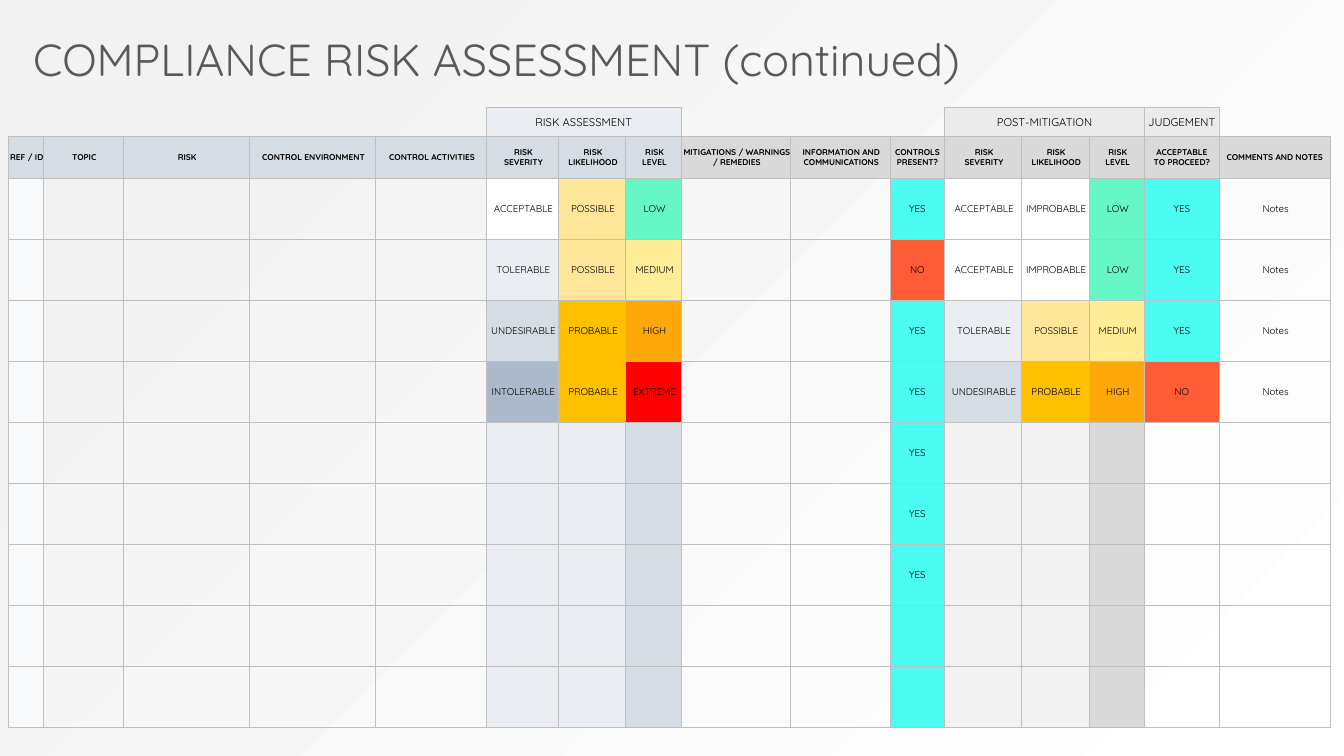
from pptx import Presentation
from pptx.dml.color import RGBColor
from pptx.enum.text import MSO_ANCHOR, MSO_AUTO_SIZE, PP_ALIGN
from pptx.oxml import parse_xml
from pptx.oxml.ns import nsdecls, qn
from pptx.oxml.xmlchemy import OxmlElement
from pptx.util import Inches, Pt

COLORS = {
    "white": "FFFFFF", "title": "595959", "text": "000000", "border": "BFBFBF",
    "mist": "F2F2F2", "ref": "F7F9FB", "blue_light": "EAEEF3", "blue": "D6DCE4",
    "blue_dark": "ACB9CA", "gray_light": "EBEBEB", "gray": "D9D9D9",
    "cyan": "4BFCF2", "green": "65F7C6", "sand": "FFE699", "yellow": "FFEC97",
    "amber": "FFC000", "orange": "FFA80B", "coral": "FF5B37", "red": "FF0000",
}
RATINGS = {
    "ACCEPTABLE": "white", "TOLERABLE": "blue_light", "UNDESIRABLE": "blue",
    "INTOLERABLE": "blue_dark", "IMPROBABLE": "white", "POSSIBLE": "sand",
    "PROBABLE": "amber", "LOW": "green", "MEDIUM": "yellow", "HIGH": "orange",
    "EXTREME": "red", "YES": "cyan", "NO": "coral",
}
COLUMN_FILLS = {0: "ref", 5: "blue_light", 6: "blue_light", 7: "blue",
                10: "cyan", 11: "mist", 12: "mist", 13: "gray"}
GROUPS = {5: (3, "RISK ASSESSMENT", "blue_light"),
          11: (3, "POST-MITIGATION", "gray_light"),
          14: (1, "JUDGEMENT", "gray_light")}
RATED = ["RISK\vSEVERITY", "RISK LIKELIHOOD", "RISK\vLEVEL"]
HEADERS = ["REF / ID", "TOPIC", "RISK", "CONTROL ENVIRONMENT", "CONTROL ACTIVITIES",
           *RATED, "MITIGATIONS / WARNINGS / REMEDIES",
           "INFORMATION AND COMMUNICATIONS", "CONTROLS PRESENT?", *RATED,
           "ACCEPTABLE\vTO PROCEED?", "COMMENTS AND NOTES"]
WIDTHS = [35, 79, 125, 125, 110, 71, 67, 55, 108, 99, 54, 76, 67, 55, 74, 110]
BEFORE = [("ACCEPTABLE", "POSSIBLE", "LOW"), ("TOLERABLE", "POSSIBLE", "MEDIUM"),
          ("UNDESIRABLE", "PROBABLE", "HIGH"), ("INTOLERABLE", "PROBABLE", "EXTREME")]
AFTER = [("ACCEPTABLE", "IMPROBABLE", "LOW")] * 2 + BEFORE[1:3]
CONTROLS = ["YES", "NO", "YES", "YES", "YES", "YES", "YES"]
PROCEED = ["YES", "YES", "YES", "NO"]
BODY_ROWS = 9
FLUSH_COLUMNS = (10, 14)


class Deck:
    """Hold the style and current slide, laid out on a grid of 160 by 90."""

    font, cols, rows = "Quicksand", 160, 90

    def __init__(self):
        self.prs = Presentation()
        self.prs.slide_width, self.prs.slide_height = Inches(13.33), Inches(7.5)
        self.s = self.prs.slides.add_slide(self.prs.slide_layouts[6])

    def x(self, n):
        return int(self.prs.slide_width * n / self.cols)

    def y(self, n):
        return int(self.prs.slide_height * n / self.rows)

    def rgb(self, name):
        return RGBColor.from_string(COLORS[name])

    def background(self, stops, angle):
        fill = self.s.background.fill
        fill.gradient()
        fill.gradient_angle = angle
        for stop, (position, color) in zip(fill.gradient_stops, stops):
            stop.position, stop.color.rgb = position, self.rgb(color)

    def set_text(self, p, text, size, color="text", bold=False):
        p.text = text
        for r in p.runs:
            for key, value in {"name": self.font, "size": Pt(size), "bold": bold}.items():
                setattr(r.font, key, value)
            r.font.color.rgb = self.rgb(color)
        marks = [(br, "a:rPr") for br in p._p.findall(qn("a:br"))]
        for parent, tag in marks + [(p._p, "a:endParaRPr")]:
            props = OxmlElement(tag)
            props.set("sz", str(size * 100))
            parent.append(props)

    def text(self, x, y, w, h, text, size, color):
        tf = self.s.shapes.add_textbox(self.x(x), self.y(y), self.x(w), self.y(h)).text_frame
        tf.word_wrap, tf.auto_size = False, MSO_AUTO_SIZE.SHAPE_TO_FIT_TEXT
        self.set_text(tf.paragraphs[0], text, size, color)

    def table(self, x, y, w, widths, heights):
        frame = self.s.shapes.add_table(len(heights), len(widths), self.x(x), self.y(y),
                                        self.x(w), self.y(sum(heights)))
        table = frame.table
        table.first_row = table.horz_banding = False
        style = table._tbl.tblPr.find(qn("a:tableStyleId"))
        style.text = "{2D5ABB26-0587-4C30-8999-92F81FD0307C}"
        for column, share in zip(table.columns, widths):
            column.width = int(self.x(w) * share / sum(widths))
        for row, height in zip(table.rows, heights):
            row.height = self.y(height)
        return table

    def cell(self, cell, text="", fill=None, size=7, bold=False, inset=0.02):
        margins = {"margin_left": Inches(inset), "margin_right": 0,
                   "margin_top": 0, "margin_bottom": 0}
        for key, value in {**margins, "vertical_anchor": MSO_ANCHOR.MIDDLE}.items():
            setattr(cell, key, value)
        if fill:
            cell.fill.solid()
            cell.fill.fore_color.rgb = self.rgb(fill)
        else:
            cell.fill.background()
        p = cell.text_frame.paragraphs[0]
        p.alignment = PP_ALIGN.CENTER
        self.set_text(p, text, size, bold=bold)

    def borders(self, cell, top=0.5):
        sides = {"L": 0.5, "R": 0.5, "T": top, "B": 0.5}
        for i, (side, width) in enumerate(sides.items()):
            line = parse_xml(
                f'<a:ln{side} {nsdecls("a")} w="{int(Pt(width))}"><a:solidFill>'
                f'<a:srgbClr val="{COLORS["border"]}"/></a:solidFill></a:ln{side}>')
            cell._tc.get_or_add_tcPr().insert(i, line)


def body_values(i):
    values = [""] * len(WIDTHS)
    if i < len(BEFORE):
        values[5:8], values[11:14] = BEFORE[i], AFTER[i]
        values[14:] = [PROCEED[i], "Notes"]
    if i < len(CONTROLS):
        values[10] = CONTROLS[i]
    return values


def main():
    deck = Deck()
    deck.background([(0, "white"), (0.87, "mist")], 135)
    group, header, total = 3.36, 5.04, 73.8
    body = (total - group - header) / BODY_ROWS
    table = deck.table(0.96, 12.84, 157.44, WIDTHS, [group, header] + [body] * BODY_ROWS)

    for col in range(len(WIDTHS)):
        if col not in GROUPS:
            deck.cell(table.cell(0, col))
    for col, (span, label, fill) in GROUPS.items():
        for k in range(col, col + span):
            deck.borders(table.cell(0, k), top=1)
        if span > 1:
            table.cell(0, col).merge(table.cell(0, col + span - 1))
        deck.cell(table.cell(0, col), label, fill, size=8, inset=0)

    for col, label in enumerate(HEADERS):
        inset = 0 if col in FLUSH_COLUMNS + (15,) else 0.02
        cell = table.cell(1, col)
        deck.cell(cell, label, "blue" if col < 8 else "gray", 6, True, inset)
        deck.borders(cell)

    for i in range(BODY_ROWS):
        for col, value in enumerate(body_values(i)):
            cell = table.cell(i + 2, col)
            fill = RATINGS.get(value, COLUMN_FILLS.get(col))
            deck.cell(cell, value, fill, inset=0 if col in FLUSH_COLUMNS else 0.02)
            deck.borders(cell)

    deck.text(2.76, 3.24, 116.04, 7.68, "COMPLIANCE RISK ASSESSMENT (continued)", 32, "title")
    deck.prs.save("out.pptx")


if __name__ == "__main__":
    main()
